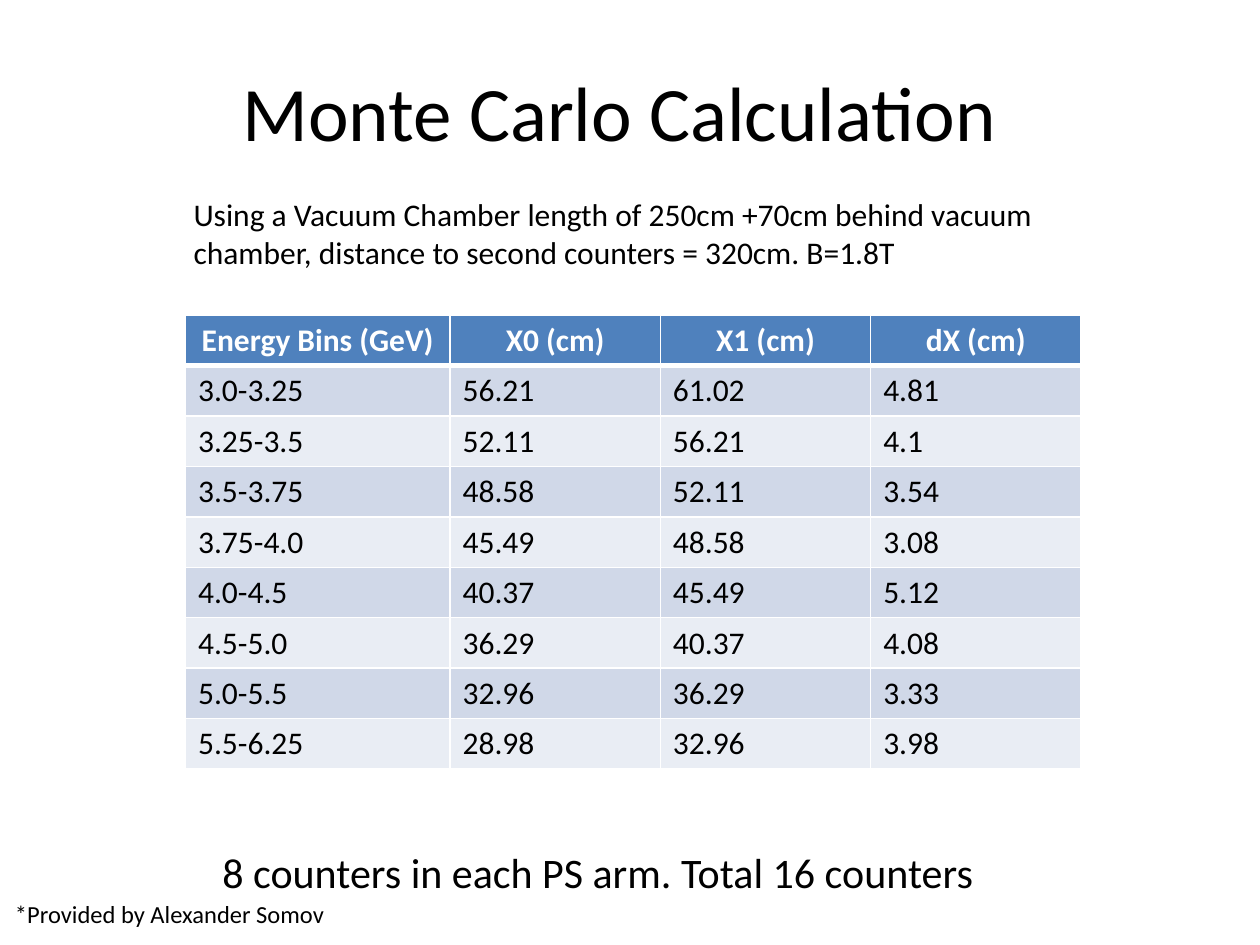
import pptx
import pptx.dml.color
import pptx.enum.text
import pptx.oxml
import pptx.oxml.ns
import pptx.util

Pt = pptx.util.Pt
ALIGN = pptx.enum.text.PP_ALIGN
ANCHOR = pptx.enum.text.MSO_ANCHOR


def color(hex_value):
    return pptx.dml.color.RGBColor.from_string(hex_value)


def write(frame, text, size=18, ink="000000", bold=False, align=ALIGN.LEFT, font="Calibri"):
    paragraph = frame.paragraphs[0]
    paragraph.alignment = align
    run = paragraph.add_run()
    run.text = text
    run.font.name = font
    run.font.size = Pt(size)
    run.font.bold = bold
    run.font.color.rgb = color(ink)


class SlideBuilder:
    header_fill = "4F81BD"
    band_fills = ("D0D8E8", "E9EDF4")
    white = "FFFFFF"

    def __init__(self, slide):
        self.slide = slide

    def text(self, box, text, anchor=ANCHOR.TOP, **style):
        frame = self.slide.shapes.add_textbox(*map(Pt, box)).text_frame
        frame.word_wrap = True
        frame.vertical_anchor = anchor
        write(frame, text, **style)

    def borders(self, cell, **widths):
        properties = cell._tc.get_or_add_tcPr()
        for side in "LRTB":
            properties.append(pptx.oxml.parse_xml(
                f'<a:ln{side} {pptx.oxml.ns.nsdecls("a")} w="{Pt(widths.get(side, 1))}">'
                f'<a:solidFill><a:srgbClr val="{self.white}"/></a:solidFill></a:ln{side}>'))

    def table(self, left, top, column_widths, row_height, rows):
        table = self.slide.shapes.add_table(
            len(rows), len(column_widths), Pt(left), Pt(top),
            Pt(sum(column_widths)), Pt(row_height * len(rows))).table
        for column, width in zip(table.columns, column_widths):
            column.width = Pt(width)
        for r, values in enumerate(rows):
            table.rows[r].height = Pt(row_height)
            for c, value in enumerate(values):
                cell = table.cell(r, c)
                # A thicker rule separates the header from the body
                self.borders(cell, **{0: {"B": 3}, 1: {"T": 3}}.get(r, {}))
                cell.fill.solid()
                if r == 0:
                    cell.fill.fore_color.rgb = color(self.header_fill)
                    write(cell.text_frame, value, ink=self.white, bold=True, align=ALIGN.CENTER)
                else:
                    cell.fill.fore_color.rgb = color(self.band_fills[(r - 1) % 2])
                    write(cell.text_frame, value)


def main():
    deck = pptx.Presentation()
    deck.slide_width, deck.slide_height = Pt(720), Pt(540)
    builder = SlideBuilder(deck.slides.add_slide(deck.slide_layouts[6]))

    # Setup of the calculation
    builder.text((103.5, 108, 516, 51),
                 "Using a Vacuum Chamber length of 250cm +70cm behind vacuum chamber, "
                 "distance to second counters = 320cm. B=1.8T")

    # Counter positions for each energy bin
    energy_bins = [
        ("Energy Bins (GeV)", "X0 (cm)", "X1 (cm)", "dX (cm)"),
        ("3.0-3.25", "56.21", "61.02", "4.81"),
        ("3.25-3.5", "52.11", "56.21", "4.1"),
        ("3.5-3.75", "48.58", "52.11", "3.54"),
        ("3.75-4.0", "45.49", "48.58", "3.08"),
        ("4.0-4.5", "40.37", "45.49", "5.12"),
        ("4.5-5.0", "36.29", "40.37", "4.08"),
        ("5.0-5.5", "32.96", "36.29", "3.33"),
        ("5.5-6.25", "28.98", "32.96", "3.98"),
    ]
    builder.table(106, 180, [151.2] + [120.2] * 3, 28.8, energy_bins)

    # Credit, title and conclusion
    builder.text((1.5, 510, 210, 24.5), "*Provided by Alexander Somov", size=14)
    builder.text((30, 18, 648, 90), "Monte Carlo Calculation",
                 anchor=ANCHOR.MIDDLE, size=44, align=ALIGN.CENTER)
    builder.text((120, 480, 468, 36), "8 counters in each PS arm. Total 16 counters", size=24)

    deck.save("out.pptx")


if __name__ == "__main__":
    main()
